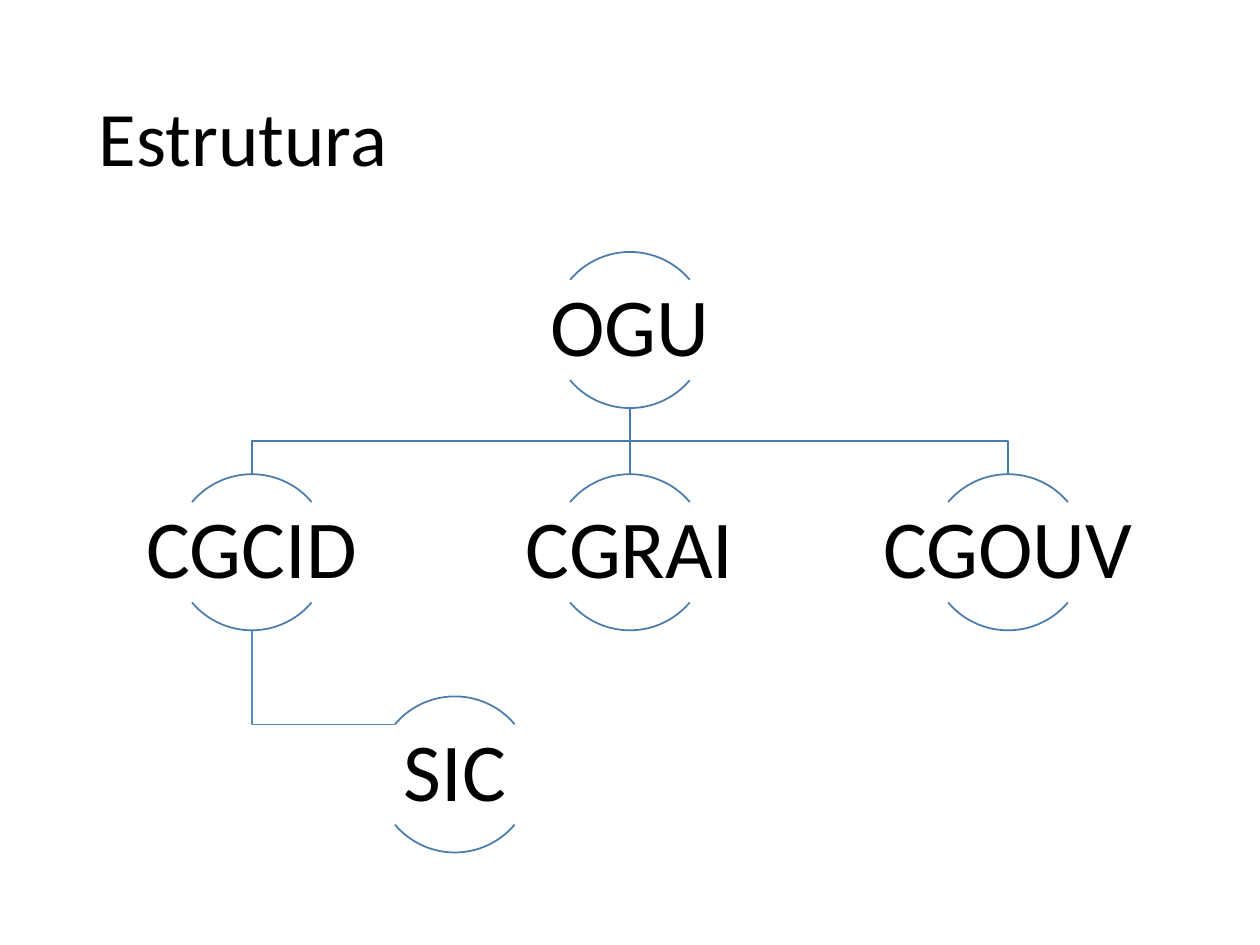
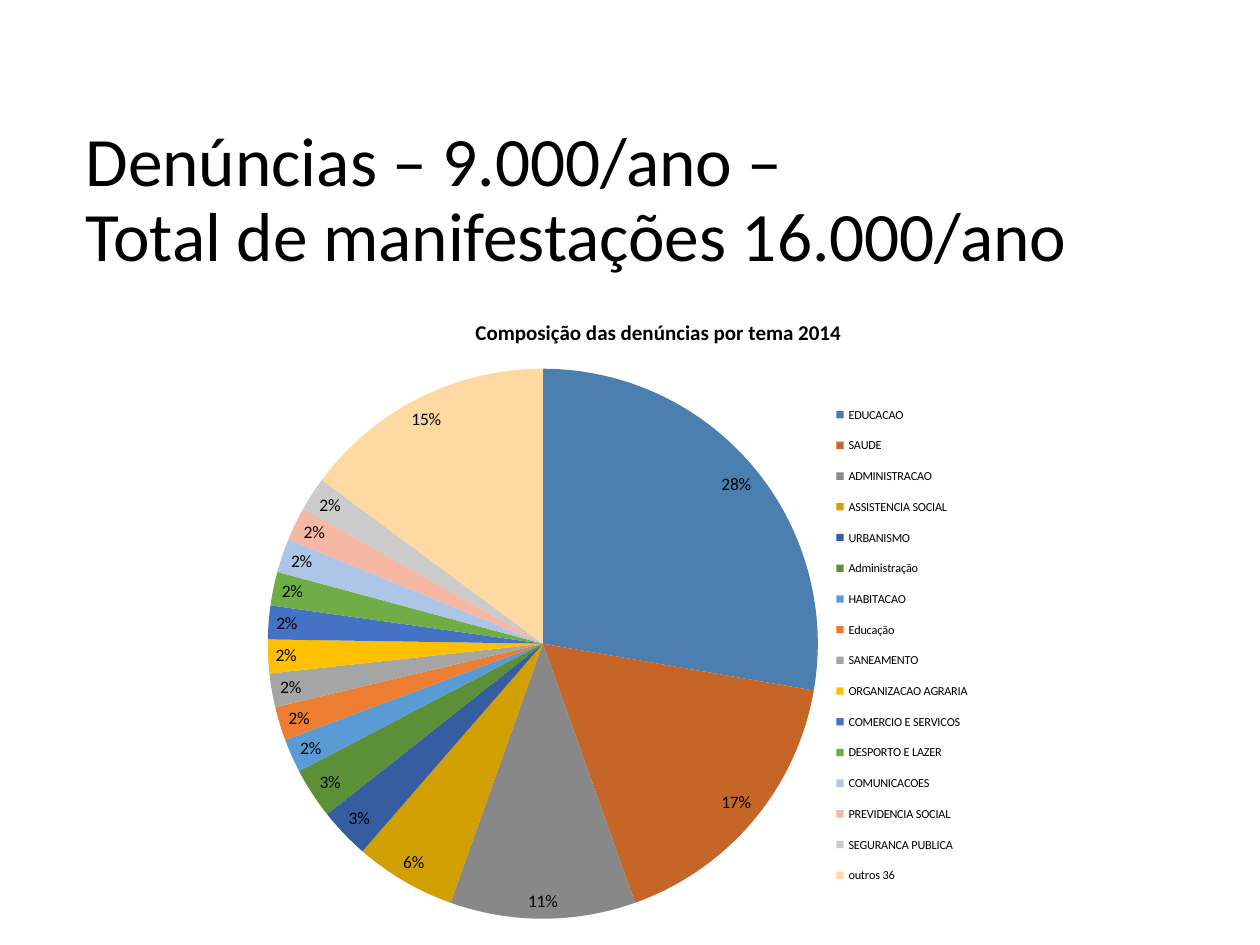
import pptx
import pptx.chart.data
import pptx.dml.color
import pptx.enum.chart
import pptx.enum.shapes
import pptx.enum.text
import pptx.oxml
import pptx.oxml.ns
import pptx.util
from pptx.util import Pt

FONT = "Calibri"
COLORS = {"text": "000000", "line": "497CAB", "side line": "538DC1"}
THEMES = [  # category, percent, slice colour
    ("EDUCACAO", 28, "4B7FB0"),
    ("SAUDE", 17, "C56628"),
    ("ADMINISTRACAO", 11, "888888"),
    ("ASSISTENCIA SOCIAL", 6, "D29F00"),
    ("URBANISMO", 3, "375DA1"),
    ("Administração", 3, "5B9038"),
    ("HABITACAO", 2, "5B9BD5"),
    ("Educação", 2, "ED7D31"),
    ("SANEAMENTO", 2, "A5A5A5"),
    ("ORGANIZACAO AGRARIA", 2, "FFC000"),
    ("COMERCIO E SERVICOS", 2, "4472C4"),
    ("DESPORTO E LAZER", 2, "70AD47"),
    ("COMUNICACOES", 2, "ADC6E7"),
    ("PREVIDENCIA SOCIAL", 2, "F4B8A5"),
    ("SEGURANCA PUBLICA", 2, "CBCBCB"),
    ("outros 36", 15, "FFD8A2"),
]


def rgb(hex_color):
    return pptx.dml.color.RGBColor.from_string(hex_color)


def add_text(slide, box, lines, size, align="LEFT", inset=None):
    shape = slide.shapes.add_textbox(*map(Pt, box))
    frame = shape.text_frame
    frame.word_wrap = True
    frame.vertical_anchor = pptx.enum.text.MSO_ANCHOR.MIDDLE
    if inset is not None:
        frame.margin_left = frame.margin_right = Pt(inset)
        frame.margin_top = frame.margin_bottom = Pt(inset)
    paragraph = frame.paragraphs[0]
    paragraph.alignment = getattr(pptx.enum.text.PP_ALIGN, align)
    paragraph.line_spacing = 0.9
    for index, line in enumerate(lines):
        if index:
            paragraph.add_line_break()
        run = paragraph.add_run()
        run.text = line
        run.font.name = FONT
        run.font.size = Pt(size)
        run.font.color.rgb = rgb(COLORS["text"])


def add_title(slide, box, lines, size):
    add_text(slide, box, lines, size)


def style_line(shape, color="line"):
    shape.line.color.rgb = rgb(COLORS[color])
    shape.line.width = Pt(1)


def add_elbow(slide, points, color="line"):
    points = [(Pt(x), Pt(y)) for x, y in points]
    builder = slide.shapes.build_freeform(*points[0], scale=1.0)
    builder.add_line_segments(points[1:], close=False)
    shape = builder.convert_to_shape()
    shape.shadow.inherit = False
    shape.fill.background()
    style_line(shape, color)


def add_unit(slide, name, center, top, diameter):
    """A name between the upper and lower arcs of a circle."""
    for start, end in ((132, 192), (24, 84)):
        arc = slide.shapes.add_shape(
            pptx.enum.shapes.MSO_SHAPE.ARC,
            Pt(center - diameter / 2), Pt(top), Pt(diameter), Pt(diameter))
        arc.adjustments[0] = start
        arc.adjustments[1] = end
        arc.shadow.inherit = False
        arc.fill.background()
        style_line(arc)
    label_box = (center - diameter, top + 0.18 * diameter, 2 * diameter, 0.64 * diameter)
    add_text(slide, label_box, [name], 47, "CENTER", 2.16)


def add_organisation(slide, box):
    left, top, width, height = box
    diameter = 0.26 * height
    row_step = 0.37 * height
    column_step = (width - 2 * diameter) / 2
    columns = [left + diameter + column_step * index for index in range(3)]
    rows = [top + row_step * index for index in range(3)]
    middle = columns[1]
    parent_bottom = rows[0] + diameter
    junction = (parent_bottom + rows[1]) / 2
    side_center = columns[0] + 1.3 * diameter

    # Lines between units
    for column in (columns[2], columns[0]):
        add_elbow(slide, [(middle, parent_bottom), (middle, junction),
                          (column, junction), (column, rows[1])])
    trunk = slide.shapes.add_connector(
        pptx.enum.shapes.MSO_CONNECTOR.STRAIGHT,
        Pt(middle), Pt(parent_bottom), Pt(middle), Pt(rows[1]))
    style_line(trunk)
    trunk._element.spPr.append(pptx.oxml.parse_xml(
        f"<a:effectLst {pptx.oxml.ns.nsdecls('a')}/>"))
    arc_start = (side_center - 0.383 * diameter, rows[2] + 0.18 * diameter)
    add_elbow(slide, [(columns[0], rows[1] + diameter),
                      (columns[0], arc_start[1]), arc_start], "side line")

    # Units
    add_unit(slide, "OGU", middle, rows[0], diameter)
    for name, column in zip(("CGCID", "CGRAI", "CGOUV"), columns):
        add_unit(slide, name, column, rows[1], diameter)
    add_unit(slide, "SIC", side_center, rows[2], diameter)


def set_layout(element, position, x, y, width, height, inner=False):
    """Place a chart part by fractions of the chart box."""
    for old_layout in element.xpath("./c:layout"):
        element.remove(old_layout)
    target = '<c:layoutTarget val="inner"/>' if inner else ""
    element.insert(position, pptx.oxml.parse_xml(
        f"<c:layout {pptx.oxml.ns.nsdecls('c')}><c:manualLayout>{target}"
        '<c:xMode val="edge"/><c:yMode val="edge"/>'
        f'<c:x val="{x}"/><c:y val="{y}"/><c:w val="{width}"/><c:h val="{height}"/>'
        "</c:manualLayout></c:layout>"))


def add_theme_chart(slide, box):
    data = pptx.chart.data.CategoryChartData()
    data.categories = [name for name, _, _ in THEMES]
    data.add_series("Series 1", [value for _, value, _ in THEMES])
    chart = slide.shapes.add_chart(
        pptx.enum.chart.XL_CHART_TYPE.PIE, *map(Pt, box), data).chart
    chart.font.name = FONT
    chart.font.size = Pt(10)
    chart.font.color.rgb = rgb(COLORS["text"])

    # Chart title
    chart.has_title = True
    run = chart.chart_title.text_frame.paragraphs[0].add_run()
    run.text = "Composição das denúncias por tema 2014"
    run.font.name = FONT
    run.font.size = Pt(12)
    run.font.bold = True
    run.font.color.rgb = rgb(COLORS["text"])

    # Slices and percentages
    plot = chart.plots[0]
    plot.vary_by_categories = True
    for index, (_, _, color) in enumerate(THEMES):
        slice_format = plot.series[0].points[index].format
        slice_format.fill.solid()
        slice_format.fill.fore_color.rgb = rgb(color)
        slice_format.line.fill.background()
    labels = plot.series[0].data_labels
    labels.show_percentage = True
    labels.show_value = False
    labels.number_format = "0%"
    labels.number_format_is_linked = False
    labels.position = pptx.enum.chart.XL_LABEL_POSITION.BEST_FIT

    # Legend
    chart.has_legend = True
    chart.legend.position = pptx.enum.chart.XL_LEGEND_POSITION.RIGHT
    chart.legend.include_in_layout = False
    chart.legend.font.name = FONT
    chart.legend.font.size = Pt(7)
    chart.legend.font.color.rgb = rgb(COLORS["text"])

    chart_root = chart.element
    set_layout(chart_root.xpath(".//c:plotArea")[0], 0, 0.155, 0.115, 0.486, 0.856, True)
    set_layout(chart_root.xpath(".//c:legend")[0], 1, 0.645, 0.15, 0.14, 0.79)


def build_structure_slide(slide):
    add_title(slide, (49.5, 28.8, 621, 104.4), ["Estrutura"], 44)
    add_organisation(slide, (54.7, 144, 610.6, 343.2))


def build_reports_slide(slide):
    add_title(slide, (41.8, 61.9, 628.6, 106.6),
              ["Denúncias – 9.000/ano –", "Total de manifestações 16.000/ano"], 39.6)
    add_theme_chart(slide, (52.6, 168.5, 647.3, 367.2))


def main():
    presentation = pptx.Presentation()
    presentation.slide_width = Pt(720)
    presentation.slide_height = Pt(540)
    for build in (build_structure_slide, build_reports_slide):
        build(presentation.slides.add_slide(presentation.slide_layouts[6]))
    presentation.save("out.pptx")


if __name__ == "__main__":
    main()
